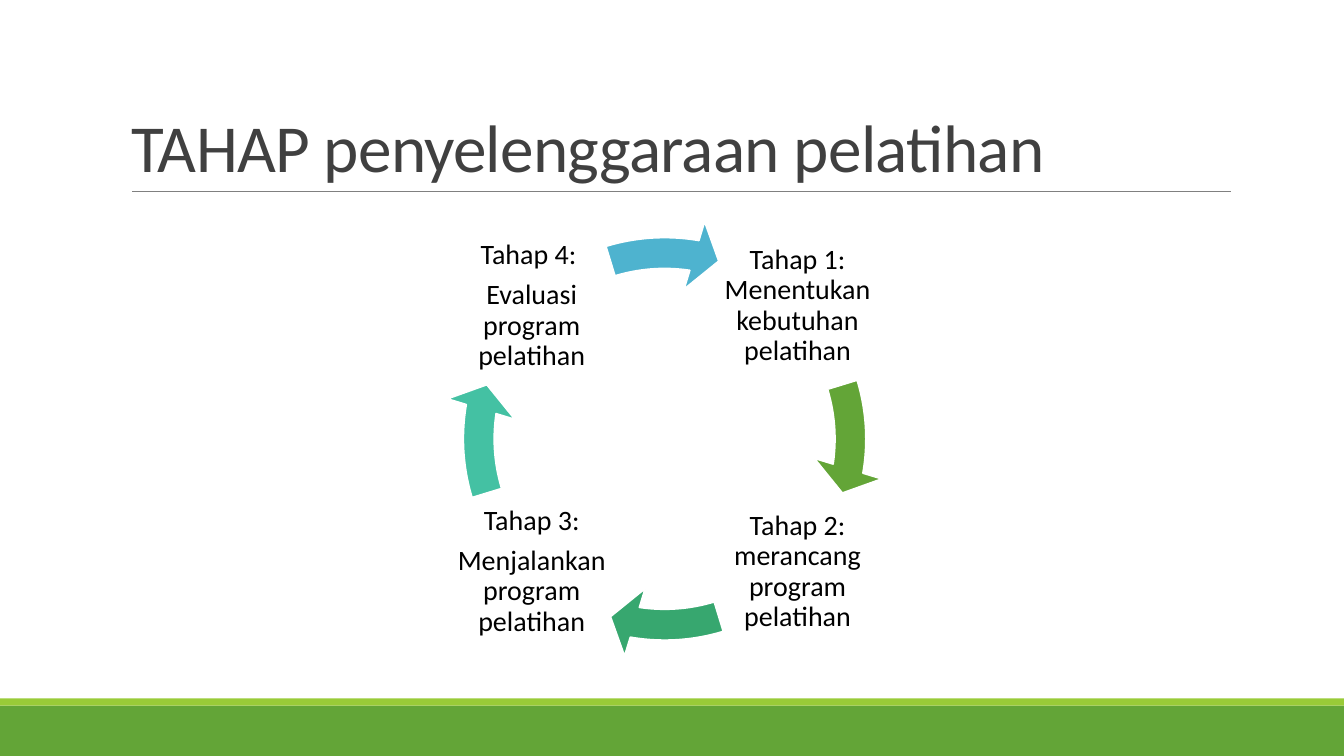
from pptx import Presentation
from pptx.dml.color import RGBColor
from pptx.enum.shapes import MSO_CONNECTOR as Connector, MSO_SHAPE as Preset
from pptx.enum.text import MSO_ANCHOR as Anchor, MSO_AUTO_SIZE as AutoSize, PP_ALIGN as Align
from pptx.oxml.ns import qn
from pptx.util import Cm, Pt
from lxml import etree

FONT = "Calibri"
WIDTH, HEIGHT = 33.87, 19.05

# Cycle geometry in cm
CENTER_X, CENTER_Y = 16.75, 11.06
LABEL_OFFSET, LABEL_SIZE, RING_SIZE = 3.35, 3.94, 11.15

# Column side, row side, paragraphs and colour of the arrow after each stage
STAGES = [
    (1, -1, ["Tahap 1: Menentukan kebutuhan pelatihan"], "63A537"),
    (1, 1, ["Tahap 2: merancang program pelatihan"], "37A76F"),
    (-1, 1, ["Tahap 3:", "Menjalankan program pelatihan"], "44C1A3"),
    (-1, -1, ["Tahap 4: ", "Evaluasi program pelatihan"], "4EB3CF"),
]


def color(value):
    return RGBColor.from_string(value)


def add_run(paragraph, text, size, value):
    run = paragraph.add_run()
    run.text = text
    run.font.name = FONT
    run.font.size = Pt(size)
    run.font.color.rgb = color(value)
    return run


def add_filled(slide, preset, left, top, width, height, fill):
    shape = slide.shapes.add_shape(preset, Cm(left), Cm(top), Cm(width), Cm(height))
    shape.shadow.inherit = False
    shape.fill.solid()
    shape.fill.fore_color.rgb = color(fill)
    shape.line.fill.background()
    return shape


def add_rule(slide, left, right, top):
    line = slide.shapes.add_connector(
        Connector.STRAIGHT, Cm(left), Cm(top), Cm(right), Cm(top))
    line.line.color.rgb = color("808080")
    line.line.width = Pt(0.5)
    etree.SubElement(line.element.spPr, qn("a:effectLst"))


def set_title(slide, text):
    title = slide.shapes.title
    title.left, title.top = Cm(3.05), Cm(0.79)
    title.width, title.height = Cm(27.94), Cm(4.04)
    frame = title.text_frame
    frame.auto_size = AutoSize.NONE
    frame.vertical_anchor = Anchor.BOTTOM
    paragraph = frame.paragraphs[0]
    paragraph.alignment = Align.LEFT
    paragraph.line_spacing = 0.85
    run = add_run(paragraph, text, 48, "404040")
    run.font._element.set("spc", "-50")


def add_label(slide, column, row, texts):
    left = CENTER_X + column * LABEL_OFFSET - LABEL_SIZE / 2
    top = CENTER_Y + row * LABEL_OFFSET - LABEL_SIZE / 2
    box = slide.shapes.add_textbox(Cm(left), Cm(top), Cm(LABEL_SIZE), Cm(LABEL_SIZE))
    frame = box.text_frame
    frame.word_wrap = True
    frame.vertical_anchor = Anchor.MIDDLE
    frame.margin_left = frame.margin_right = Cm(0.07)
    frame.margin_top = frame.margin_bottom = Cm(0.07)
    for index, text in enumerate(texts):
        paragraph = frame.add_paragraph() if index else frame.paragraphs[0]
        paragraph.alignment = Align.CENTER
        paragraph.line_spacing = 0.9
        paragraph.space_before = Pt(7 if index else 0)
        add_run(paragraph, text, 20, "000000")


def add_cycle_arrow(slide, quarter, fill):
    arrow = add_filled(slide, Preset.CIRCULAR_ARROW, CENTER_X - RING_SIZE / 2,
                       CENTER_Y - RING_SIZE / 2, RING_SIZE, RING_SIZE, fill)
    arrow.line.color.rgb = color("FFFFFF")
    arrow.line.width = Pt(1.25)
    # Angles are stored in 0.6 of a degree per... unit: 216 units make a full turn... 54 a quarter
    end, start = 5.52 + 54 * quarter, (205.83 + 54 * quarter) % 216
    for index, value in enumerate((0.07, 4.65, end, start, 0.08)):
        arrow.adjustments[index] = value


def main():
    presentation = Presentation()
    presentation.slide_width, presentation.slide_height = Cm(WIDTH), Cm(HEIGHT)
    slide = presentation.slides.add_slide(presentation.slide_layouts[5])

    # Footer bands and title
    add_filled(slide, Preset.RECTANGLE, 0, 17.78, WIDTH, 1.27, "63A537")
    add_filled(slide, Preset.RECTANGLE, 0, 17.6, WIDTH, 0.18, "99CB38")
    add_rule(slide, 3.33, 31.01, 4.83)
    set_title(slide, "TAHAP penyelenggaraan pelatihan")

    # Cycle of four stages
    for quarter, (column, row, texts, fill) in enumerate(STAGES):
        add_label(slide, column, row, texts)
        add_cycle_arrow(slide, quarter, fill)

    presentation.save("out.pptx")


if __name__ == "__main__":
    main()
